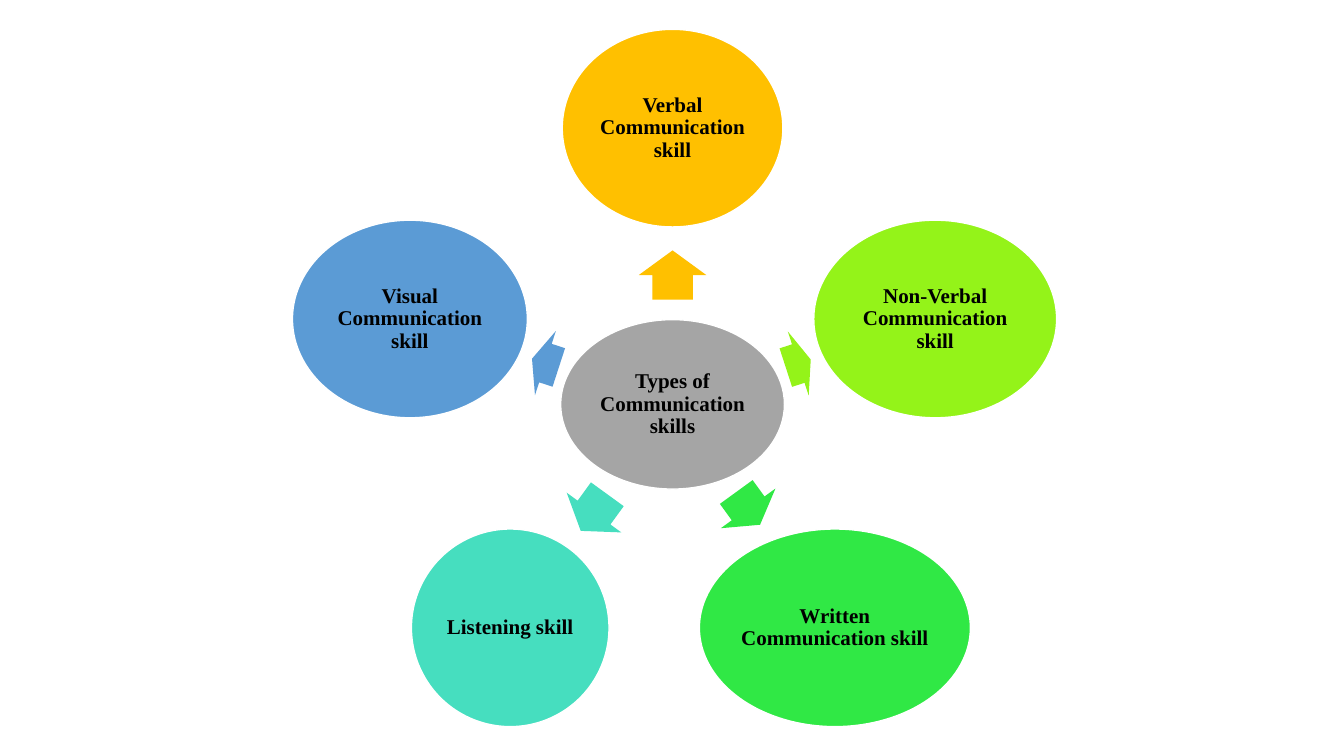
from dataclasses import dataclass
from math import cos, radians, sin

from pptx import Presentation
from pptx.dml.color import RGBColor
from pptx.enum.shapes import MSO_SHAPE
from pptx.enum.text import MSO_ANCHOR, PP_ALIGN
from pptx.util import Cm, Pt


@dataclass(frozen=True)
class Theme:
    """Colours and type of the diagram."""
    font: str = "Times New Roman"
    size: int = 15
    ink: str = "000000"
    outline: str = "FFFFFF"
    hub: str = "A5A5A5"
    verbal: str = "FFC000"
    non_verbal: str = "94F319"
    written: str = "30E845"
    listening: str = "46DEBF"
    visual: str = "5B9BD5"


class RadialDiagram:
    """Draws circles and arrows around a hub on one slide."""

    def __init__(self, page, theme, center_x, center_y):
        self.page = page
        self.theme = theme
        self.center = (center_x, center_y)

    def place(self, kind, angle, distance, width, height, color):
        """Add a filled shape at an angle and distance from the hub."""
        x = self.center[0] + distance * cos(radians(angle))
        y = self.center[1] + distance * sin(radians(angle))
        shape = self.page.shapes.add_shape(
            kind, Cm(x - width / 2), Cm(y - height / 2), Cm(width), Cm(height))
        shape.shadow.inherit = False
        shape.fill.solid()
        shape.fill.fore_color.rgb = RGBColor.from_string(color)
        return shape

    def circle(self, text, angle, distance, width, height, color):
        """Add a labelled ellipse."""
        ellipse = self.place(MSO_SHAPE.OVAL, angle, distance, width, height, color)
        ellipse.line.color.rgb = RGBColor.from_string(self.theme.outline)
        ellipse.line.width = Pt(1)
        frame = ellipse.text_frame
        frame.word_wrap = True
        frame.vertical_anchor = MSO_ANCHOR.MIDDLE
        frame.margin_left = frame.margin_right = Cm(0.05)
        frame.margin_top = frame.margin_bottom = Cm(0.05)
        para = frame.paragraphs[0]
        para.text = text
        para.alignment = PP_ALIGN.CENTER
        para.line_spacing = 0.9
        para.font.name = self.theme.font
        para.font.size = Pt(self.theme.size)
        para.font.bold = True
        para.font.color.rgb = RGBColor.from_string(self.theme.ink)

    def arrow(self, angle, distance, length, color):
        """Add a block arrow that points away from the hub."""
        arrow = self.place(MSO_SHAPE.RIGHT_ARROW, angle, distance, length, 1.7, color)
        arrow.line.fill.background()
        arrow.adjustments[0] = 0.6
        arrow.adjustments[1] = 0.5
        arrow.rotation = angle % 360


def main():
    """Build the slide of communication skills."""
    deck = Presentation()
    deck.slide_width, deck.slide_height = Cm(33.87), Cm(19.05)
    page = deck.slides.add_slide(deck.slide_layouts[6])
    theme = Theme()
    diagram = RadialDiagram(page, theme, 16.95, 10.19)
    diagram.circle("Types of Communication skills", 0, 0, 5.64, 4.27, theme.hub)

    skills = [
        ("Verbal Communication skill", theme.verbal, 5.56, 3.26, 1.24),
        ("Non-Verbal Communication skill", theme.non_verbal, 6.12, 3.33, 0.66),
        ("Written Communication skill", theme.written, 6.83, 3.24, 1.02),
        ("Listening skill", theme.listening, 4.98, 3.37, 1.14),
        ("Visual Communication skill", theme.visual, 5.92, 3.37, 0.71),
    ]
    for index, (text, color, width, arrow_distance, arrow_length) in enumerate(skills):
        angle = -90 + index * 360 / len(skills)
        diagram.arrow(angle, arrow_distance, arrow_length, color)
        diagram.circle(text, angle, 6.96, width, 4.98, color)
    deck.save("out.pptx")


if __name__ == "__main__":
    main()
